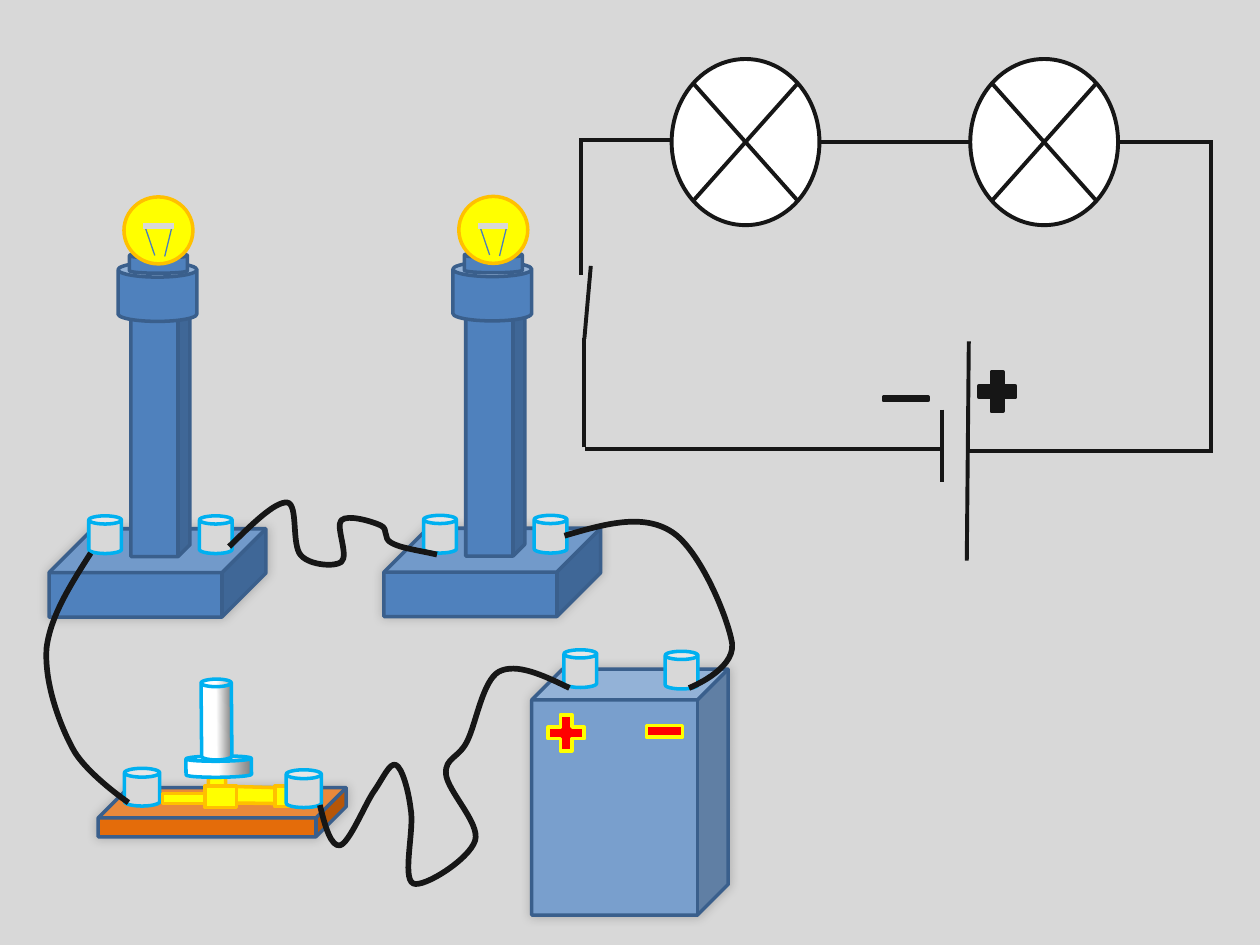
from lxml import etree
from pptx import Presentation
from pptx import util as u
from pptx.dml.color import RGBColor
from pptx.enum import shapes
from pptx.oxml.ns import qn

Cm = u.Cm
MSO = shapes.MSO_SHAPE

COLORS = {
    "background": "D8D8D8", "ink": "161616", "white": "FFFFFF", "grey": "808080",
    "blue": "4F81BD", "blue_edge": "3A5F8C", "battery": "799FCD", "filament": "4B7EBC",
    "terminal_edge": "00B0F0", "yellow": "FFFF00", "gold": "FFC000",
    "red": "FF0000", "orange": "E46C0A",
}

# Each wire: a start point, then three points per Bezier segment (cm)
WIRES = [
    # Left lamp to switch
    [(1.83, 11.15),
     (1.42, 11.79), (1.02, 12.42), (0.94, 13.06),
     (0.89, 13.72), (1.17, 14.53), (1.45, 15.06),
     (1.7, 15.57), (2.59, 16.18), (2.59, 16.18)],
    # Left lamp to right lamp
    [(4.62, 11.02),
     (5.08, 10.57), (5.54, 10.11), (5.79, 10.13),
     (6.02, 10.16), (5.87, 11), (6.07, 11.2),
     (6.25, 11.4), (6.76, 11.43), (6.88, 11.33),
     (7.04, 11.2), (6.76, 10.62), (6.88, 10.49),
     (7.01, 10.36), (7.52, 10.52), (7.67, 10.59),
     (7.85, 10.67), (7.7, 10.85), (7.9, 10.95),
     (8.08, 11.05), (8.46, 11.1), (8.81, 11.18)],
    # Switch to battery
    [(6.45, 16.23),
     (6.55, 16.66), (6.68, 17.09), (6.86, 17.04),
     (7.04, 16.99), (7.34, 16.26), (7.52, 15.98),
     (7.72, 15.7), (7.85, 15.37), (7.98, 15.42),
     (8.1, 15.47), (8.23, 15.9), (8.28, 16.31),
     (8.36, 16.71), (8.1, 17.7), (8.33, 17.81),
     (8.53, 17.91), (9.47, 17.32), (9.58, 16.94),
     (9.68, 16.59), (9.02, 15.95), (8.99, 15.6),
     (8.97, 15.27), (9.25, 15.29), (9.42, 14.94),
     (9.6, 14.58), (9.73, 13.72), (10.06, 13.54),
     (10.41, 13.36), (10.95, 13.61), (11.48, 13.87)],
    # Right lamp to battery
    [(11.38, 10.8),
     (12.17, 10.57), (12.95, 10.34), (13.54, 10.72),
     (14.1, 11.07), (14.68, 12.45), (14.76, 12.98),
     (14.81, 13.51), (13.89, 13.87), (13.89, 13.87)],
]


def rgb(name):
    return RGBColor.from_string(COLORS[name])


def style(sp, fill, line, width=2):
    sp.shadow.inherit = False
    if fill:
        sp.fill.solid()
        sp.fill.fore_color.rgb = rgb(fill)
    else:
        sp.fill.background()
    sp.line.color.rgb = rgb(line)
    sp.line.width = u.Pt(width)


def add_shape(parent, kind, x, y, w, h, fill, line, adj=None, width=2):
    sp = parent.shapes.add_shape(kind, Cm(x), Cm(y), Cm(w), Cm(h))
    style(sp, fill, line, width)
    if adj is not None:
        sp.adjustments[0] = adj
    return sp


def add_soft_shadow(sp):
    effects = sp._element.spPr.find(qn("a:effectLst"))
    shadow = etree.SubElement(effects, qn("a:outerShdw"), blurRad=str(u.Pt(6)),
                              dist="0", dir="18900000", algn="bl", rotWithShape="0")
    color = etree.SubElement(shadow, qn("a:srgbClr"), val="000000")
    etree.SubElement(color, qn("a:alpha"), val="20000")


def add_terminal(parent, x, y, w=0.66):
    add_shape(parent, MSO.CAN, x, y, w, 0.76, "background", "terminal_edge")


def add_line(parent, x1, y1, x2, y2, color="ink", width=2.25):
    c = parent.shapes.add_connector(shapes.MSO_CONNECTOR.STRAIGHT,
                                    Cm(x1), Cm(y1), Cm(x2), Cm(y2))
    c.line.color.rgb = rgb(color)
    c.line.width = u.Pt(width)
    etree.SubElement(c._element.spPr, qn("a:effectLst"))


def add_outline(parent, points, close):
    pts = [(Cm(x), Cm(y)) for x, y in points]
    builder = parent.shapes.build_freeform(*pts[0])
    builder.add_line_segments(pts[1:], close=close)
    return builder.convert_to_shape()


def add_wire(slide, points):
    sp = add_outline(slide, points, close=False)
    style(sp, None, "ink", 3.25)
    # Turn every three vertices into one cubic curve
    path_el = sp._element.find(".//" + qn("a:path"))
    vertices = path_el.findall(qn("a:lnTo"))
    for i in range(0, len(vertices), 3):
        curve = etree.SubElement(path_el, qn("a:cubicBezTo"))
        for vertex in vertices[i:i + 3]:
            curve.append(vertex[0])
            path_el.remove(vertex)


def add_battery(slide):
    grp = slide.shapes.add_group_shape()
    add_soft_shadow(add_shape(grp, MSO.CUBE, 10.72, 13.49, 3.96, 4.96,
                              "battery", "blue_edge", 0.157))
    add_terminal(grp, 11.37, 13.1)
    add_shape(grp, MSO.MATH_PLUS, 10.92, 14.28, 0.99, 0.99, "red", "yellow")
    add_shape(grp, MSO.MATH_MINUS, 12.9, 14.25, 0.99, 0.99, "red", "yellow")
    add_terminal(grp, 13.41, 13.13)


def add_lamp(slide, x, y):
    """Lamp on its stand; x, y is the top left of the base."""
    grp = slide.shapes.add_group_shape()
    blue = ("blue", "blue_edge")
    add_soft_shadow(add_shape(grp, MSO.CUBE, x, y, 4.37, 1.78, *blue, 0.497))
    add_shape(grp, MSO.CUBE, x + 1.65, y - 4.6, 1.19, 5.16, *blue, 0.199)
    for dx in (3.03, 0.8):
        add_terminal(grp, x + dx, y - 0.26)
    add_shape(grp, MSO.CAN, x + 1.39, y - 5.37, 1.59, 1.19, *blue)
    add_shape(grp, MSO.CAN, x + 1.62, y - 5.56, 1.17, 0.41, *blue)
    add_shape(grp, MSO.OVAL, x + 1.51, y - 6.69, 1.39, 1.35, "yellow", "gold")
    # Filament
    top = y - 6.1
    add_line(grp, x + 1.93, top, x + 2.13, y - 5.51, "filament", 0.75)
    add_line(grp, x + 2.48, top, x + 2.33, y - 5.49, "filament", 0.75)
    add_line(grp, x + 1.9, top, x + 2.51, top, "background", 3.5)


def add_switch(slide):
    add_soft_shadow(add_shape(slide, MSO.CUBE, 1.98, 15.88, 5, 0.99,
                              "orange", "blue_edge", 0.616))
    add_terminal(slide, 2.51, 15.49, 0.71)
    # Blade and push button
    grp = slide.shapes.add_group_shape()
    blade = add_outline(grp, [(4.19, 16.18), (4.22, 15.19), (4.55, 15.37),
                              (4.55, 15.85), (5.59, 15.88), (6.27, 16.21)], close=True)
    style(blade, "yellow", "gold")
    for box in ((3.75, 15.24, 1.32, 0.43), (4.06, 13.69, 0.61, 1.63)):
        sp = add_shape(grp, MSO.CAN, *box, "white", "terminal_edge")
        sp.rotation = 359.5
        sp.fill.gradient()
        sp.fill.gradient_angle = 0
        stops = zip(sp.fill.gradient_stops, (0.5, 1), ("white", "grey"))
        for stop, position, color in stops:
            stop.position = position
            stop.color.rgb = rgb(color)
    # Contact strips
    for box in ((3.28, 16, 1.24, 0.2), (4.13, 15.85, 0.64, 0.43), (5.54, 15.85, 0.64, 0.41)):
        add_shape(slide, MSO.RECTANGLE, *box, "yellow", "gold")
    add_terminal(slide, 5.77, 15.52, 0.71)


def add_diagram(slide):
    # Switch symbol
    add_line(slide, 11.78, 9.02, 11.78, 6.81)
    add_line(slide, 11.78, 6.83, 11.91, 5.36)
    # Lamps, leads and cell
    grp = slide.shapes.add_group_shape()
    for x in (19.56, 13.54):
        add_shape(grp, MSO.FLOWCHART_SUMMING_JUNCTION, x, 1.19, 2.98, 3.35,
                  "white", "ink", width=2.25)
    for ends in ((16.52, 2.87, 19.56, 2.87), (22.54, 2.87, 24.41, 2.87),
                 (24.41, 2.83, 24.41, 9.13), (24.41, 9.09, 19.53, 9.09),
                 (19.53, 6.88, 19.49, 11.3), (18.99, 8.26, 18.99, 9.72),
                 (18.99, 9.05, 11.79, 9.05), (11.71, 2.82, 13.54, 2.82),
                 (11.71, 5.54, 11.71, 2.79)):
        add_line(grp, *ends)
    # Polarity signs
    signs = slide.shapes.add_group_shape()
    add_shape(signs, MSO.MATH_PLUS, 19.61, 7.36, 0.99, 1.07, "ink", "ink", width=2.25)
    add_shape(signs, MSO.MATH_MINUS, 17.65, 7.9, 1.22, 0.28, "ink", "ink", width=2.25)


def main():
    prs = Presentation()
    prs.slide_width, prs.slide_height = Cm(25.4), Cm(19.05)
    slide = prs.slides.add_slide(prs.slide_layouts[6])
    slide.background.fill.solid()
    slide.background.fill.fore_color.rgb = rgb("background")

    add_battery(slide)
    add_lamp(slide, 0.99, 10.66)
    add_lamp(slide, 7.74, 10.65)
    add_switch(slide)
    for points in WIRES:
        add_wire(slide, points)
    add_diagram(slide)
    prs.save("out.pptx")


if __name__ == "__main__":
    main()
